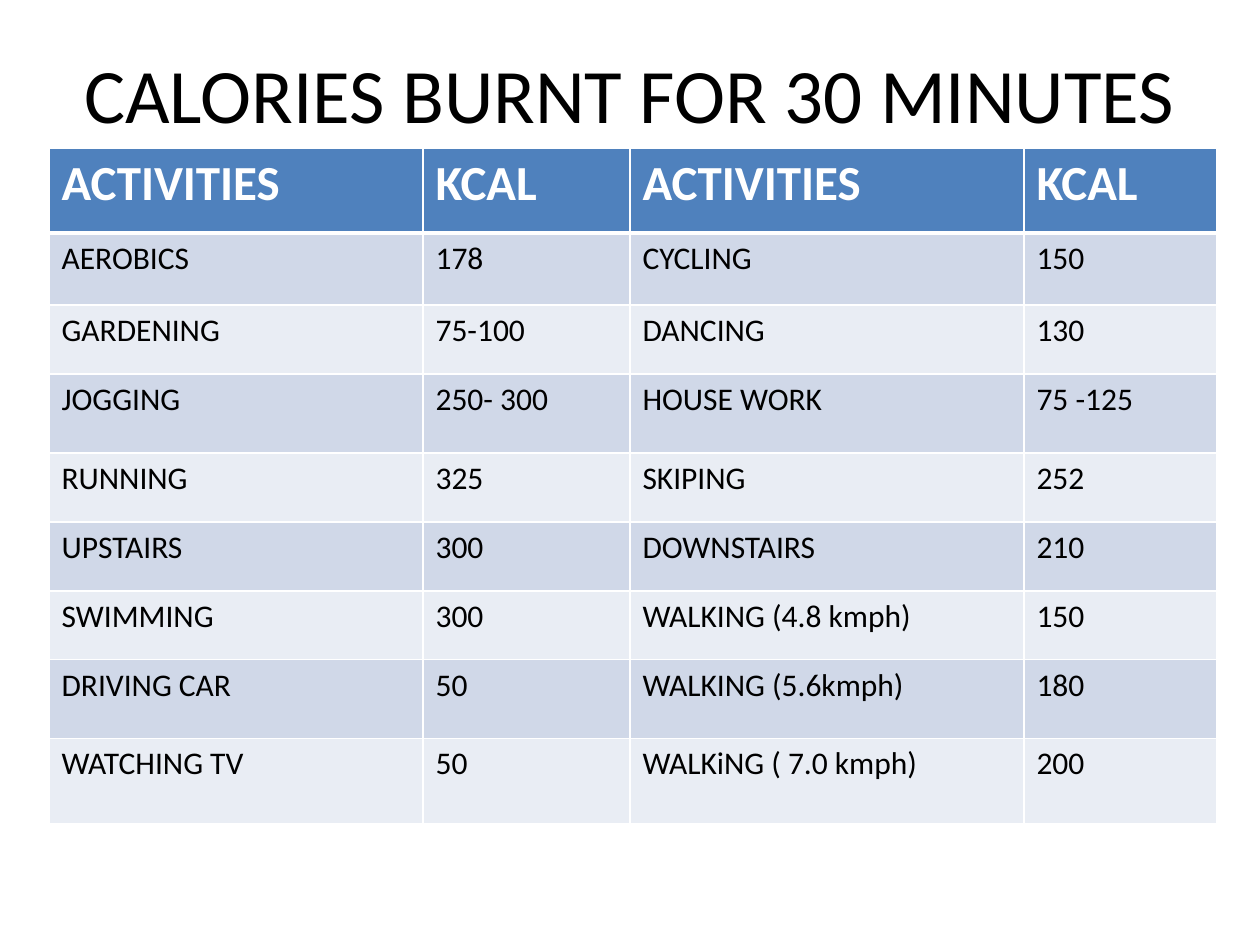
from typing import NamedTuple

from lxml.etree import SubElement
from pptx import Presentation
from pptx.dml.color import RGBColor
from pptx.enum.text import MSO_ANCHOR, MSO_AUTO_SIZE, PP_ALIGN
from pptx.oxml.ns import qn
from pptx.util import Emu, Pt

PX_PER_INCH = 126
COLORS = {
    "black": "000000",
    "white": "FFFFFF",
    "header": "4F81BD",
    "odd": "D0D8E8",
    "even": "E9EDF4",
}
TITLE_FONT = {"name": "Calibri", "size": Pt(44), "bold": False}
HEADER_FONT = {"name": "Calibri", "size": Pt(28), "bold": True}
BODY_FONT = {"name": "Calibri", "size": Pt(18), "bold": False}


class Box(NamedTuple):
    left: int
    top: int
    width: int
    height: int


class CellStyle(NamedTuple):
    font: dict
    color: str
    fill: str
    bottom_pt: int


class Activity(NamedTuple):
    name: str
    kcal: str


HEADER_STYLE = CellStyle(HEADER_FONT, "white", "header", 3)
ODD_STYLE = CellStyle(BODY_FONT, "black", "odd", 1)
EVEN_STYLE = CellStyle(BODY_FONT, "black", "even", 1)

TITLE_BOX = Box(63, 38, 1134, 110)
TABLE_LEFT, TABLE_TOP = 49, 148
COL_WIDTHS = [374, 207, 394, 193]
ROW_HEIGHTS = [85, 72, 69, 79, 69, 69, 69, 79, 85]

HEADING = Activity("ACTIVITIES", "KCAL")
LEFT_LIST = [
    HEADING,
    Activity("AEROBICS", "178"),
    Activity("GARDENING", "75-100"),
    Activity("JOGGING", "250- 300"),
    Activity("RUNNING", "325"),
    Activity("UPSTAIRS", "300"),
    Activity("SWIMMING", "300"),
    Activity("DRIVING CAR", "50"),
    Activity("WATCHING TV", "50"),
]
RIGHT_LIST = [
    HEADING,
    Activity("CYCLING", "150"),
    Activity("DANCING", "130"),
    Activity("HOUSE WORK", "75 -125"),
    Activity("SKIPING", "252"),
    Activity("DOWNSTAIRS", "210"),
    Activity("WALKING (4.8 kmph)", "150"),
    Activity("WALKING (5.6kmph)", "180"),
    Activity("WALKiNG ( 7.0 kmph)", "200"),
]


def px(value: int) -> Emu:
    return Emu(round(value * 914400 / PX_PER_INCH))


def rgb(name: str) -> RGBColor:
    return RGBColor.from_string(COLORS[name])


def write(p, text: str, font: dict, color: str) -> None:
    r = p.add_run()
    r.text = text
    for attr, value in font.items():
        setattr(r.font, attr, value)
    r.font.color.rgb = rgb(color)


def add_border(cell, side: str, width_pt: int) -> None:
    ln = SubElement(cell._tc.get_or_add_tcPr(), qn(f"a:{side}"), w=str(Pt(width_pt)))
    fill = SubElement(ln, qn("a:solidFill"))
    SubElement(fill, qn("a:srgbClr"), val=COLORS["white"])


def format_cell(cell, text: str, style: CellStyle, top_pt: int) -> None:
    # Borders come before the fill in the cell properties
    widths = {"lnL": 1, "lnR": 1, "lnT": top_pt, "lnB": style.bottom_pt}
    for side, width_pt in widths.items():
        add_border(cell, side, width_pt)
    cell.fill.solid()
    cell.fill.fore_color.rgb = rgb(style.fill)
    write(cell.text_frame.paragraphs[0], text, style.font, style.color)


def add_title(s, text: str) -> None:
    sp = s.shapes.title
    for attr, value in TITLE_BOX._asdict().items():
        setattr(sp, attr, px(value))
    tf = sp.text_frame
    frame_format = {
        "word_wrap": True,
        "auto_size": MSO_AUTO_SIZE.NONE,
        "vertical_anchor": MSO_ANCHOR.MIDDLE,
    }
    for attr, value in frame_format.items():
        setattr(tf, attr, value)
    p = tf.paragraphs[0]
    p.alignment = PP_ALIGN.CENTER
    write(p, text, TITLE_FONT, "black")


def add_calorie_table(s) -> None:
    table = s.shapes.add_table(
        len(ROW_HEIGHTS), len(COL_WIDTHS), px(TABLE_LEFT), px(TABLE_TOP),
        px(sum(COL_WIDTHS)), px(sum(ROW_HEIGHTS)),
    ).table
    for column, width in zip(table.columns, COL_WIDTHS):
        column.width = px(width)
    for row, height in zip(table.rows, ROW_HEIGHTS):
        row.height = px(height)

    # Header row, then alternating bands
    top_pt = 1
    for i, (left, right) in enumerate(zip(LEFT_LIST, RIGHT_LIST)):
        style = HEADER_STYLE if i == 0 else ODD_STYLE if i % 2 else EVEN_STYLE
        for j, text in enumerate(left + right):
            format_cell(table.cell(i, j), text, style, top_pt)
        top_pt = style.bottom_pt


def main() -> None:
    prs = Presentation()
    prs.slide_width, prs.slide_height = px(1260), px(945)
    s = prs.slides.add_slide(prs.slide_layouts[5])
    add_title(s, "CALORIES BURNT FOR 30 MINUTES")
    add_calorie_table(s)
    prs.save("out.pptx")


if __name__ == "__main__":
    main()
